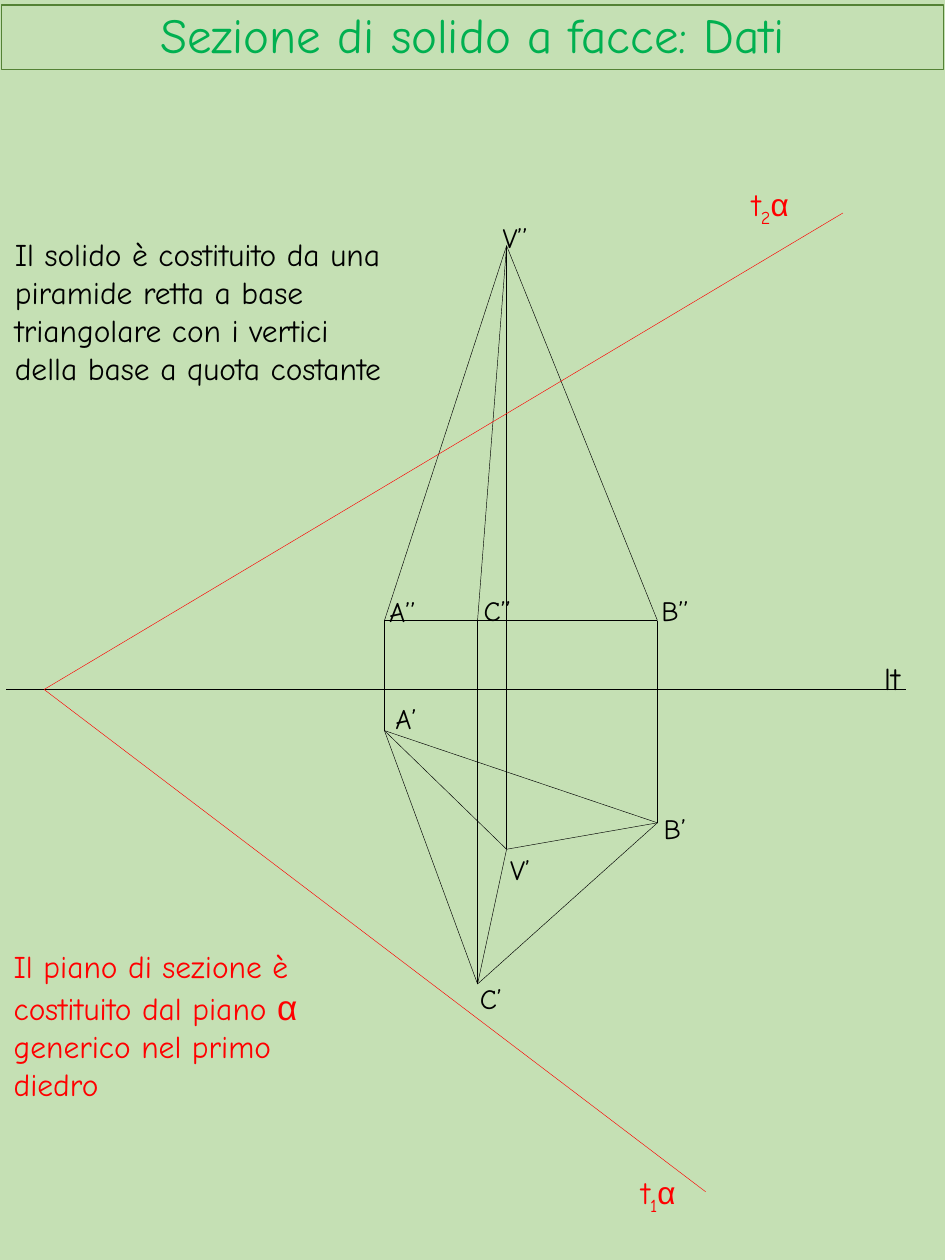
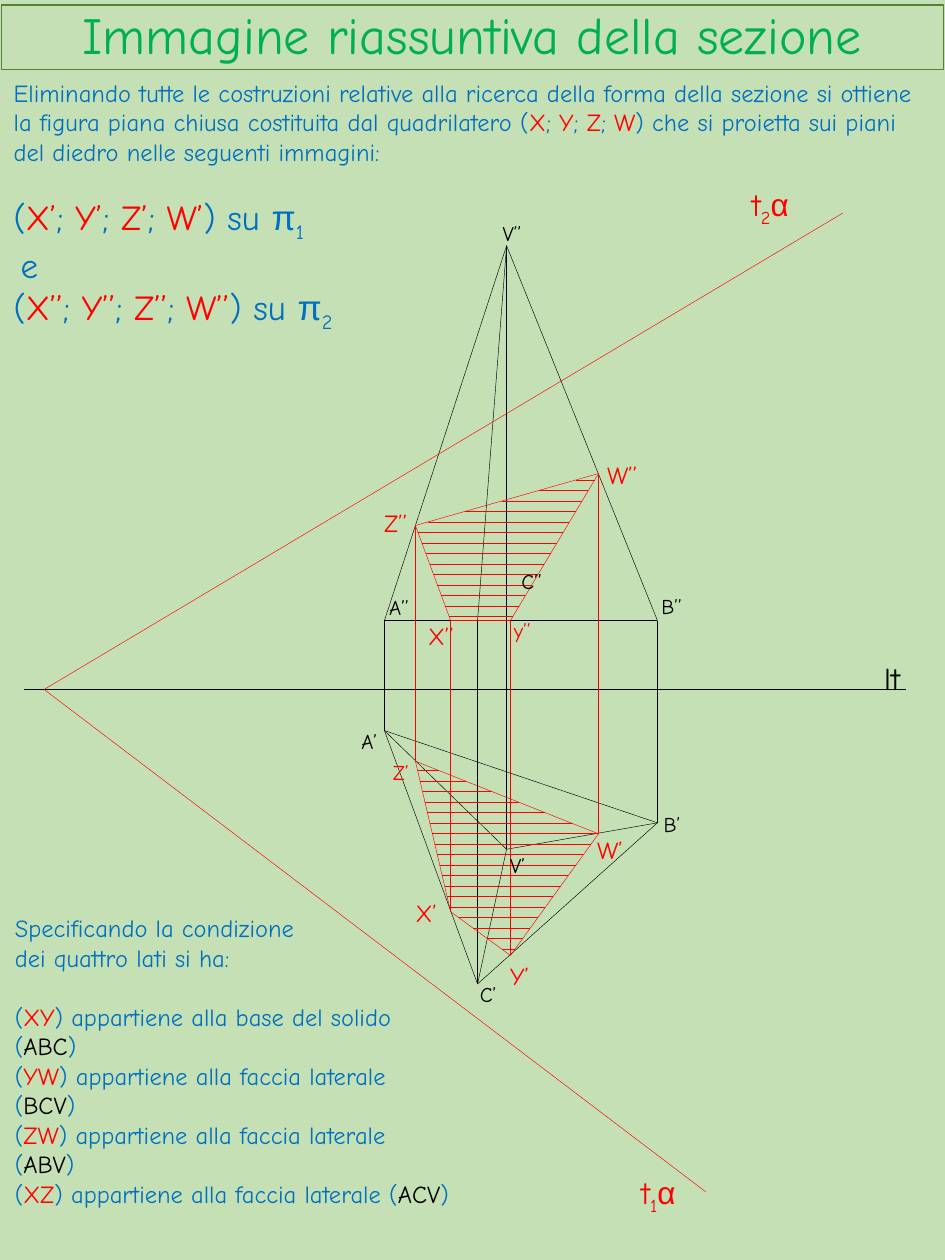
from collections import namedtuple
from itertools import combinations

from lxml import etree
from pptx import Presentation
from pptx.dml.color import RGBColor
from pptx.enum import shapes, text
from pptx.oxml import ns
from pptx.util import Pt

PALE_GREEN = RGBColor(0xC5, 0xE0, 0xB4)
FRAME_GREEN = RGBColor(0x54, 0x82, 0x35)
TITLE_GREEN = RGBColor(0x00, 0xB0, 0x50)
BLUE = RGBColor(0x00, 0x70, 0xC0)
RED = RGBColor(0xFF, 0x00, 0x00)
BLACK = RGBColor(0x00, 0x00, 0x00)
FONT = "Comic Neue"
GREEK_FONT = "Arial"

Box = namedtuple("Box", "left top width height")
Span = namedtuple("Span", "text color size", defaults=(None, None))
Line = namedtuple("Line", "spans size before indent", defaults=(0, 0))
Vertex = namedtuple("Vertex", "x elevation plan")

TITLE_BOX = Box(0.7, 2.9, 538.6, 36.7)
# Figure lengths run from the point where the plane's traces meet the ground line.
ORIGIN = (25.2, 394)
BASE = -39.4
SOLID = {
    "A": Vertex(194.5, BASE, 23.5),
    "B": Vertex(350.5, BASE, 76.2),
    "C": Vertex(247.7, BASE, 168.3),
    "V": Vertex(264.3, -253.6, 91.3),
}
SECTION = {
    "X": Vertex(232.3, BASE, 127),
    "Y": Vertex(266.5, BASE, 152),
    "W": Vertex(316.8, -123.4, 82.5),
    "Z": Vertex(212.2, -93.7, 41),
}
HATCH_STEP = 6
GROUND_END = 492.5
TRACES = [
    ("1", (378, 287), (334.1, 272.7)),
    ("2", (456.5, -272.3), (397.4, -291.8)),
]
SOLID_LABELS = {
    "A’": (193.7, 3.4), "B’": (347, 66.1), "C’": (241.9, 163.3), "V’": (259.2, 89.8),
    "A’’": (190.1, -57.8), "B’’": (345.6, -58.5), "C’’": (244.1, -58.5),
    "V’’": (254.9, -271.6),
}
SUMMARY_LABELS = {**SOLID_LABELS, "A’": (174.2, 18.6), "C’’": (265.7, -72.9)}
SECTION_LABELS = {
    "X’": (205.2, 115.8), "Y’": (259.2, 151.8), "W’": (308.9, 79.8),
    "X’’": (212.4, -42.6), "Z’’": (187.2, -107.4), "W’’": (314.6, -134.8),
}
SMALL_SECTION_LABELS = {"Z’": (192.2, 36.6), "y’’": (261.4, -44.8)}


def add_text(page, box, lines, color):
    """Write lines; Greek letters take their own font and digits drop to subscripts."""
    shape = page.shapes.add_textbox(*map(Pt, box))
    frame = shape.text_frame
    frame.word_wrap = True
    for index, line in enumerate(lines):
        para = frame.paragraphs[0] if index == 0 else frame.add_paragraph()
        para.font.name = FONT
        para.font.size = Pt(line.size)
        para.space_before = Pt(line.before)
        if line.indent:
            para._p.get_or_add_pPr().set("marL", str(Pt(line.indent)))
        for part in line.spans:
            span = para.add_run()
            span.text = part.text
            span.font.name = GREEK_FONT if part.text in "απ" else FONT
            span.font.size = Pt(part.size or line.size)
            span.font.color.rgb = color if part.color is None else part.color
            if part.text.isdigit():
                span._r.get_or_add_rPr().set("baseline", "-25000")


def add_title(page, box, words, size):
    title = page.shapes.title
    title.left, title.top, title.width, title.height = map(Pt, box)
    title.line.color.rgb = FRAME_GREEN
    title.line.width = Pt(0.75)
    frame = title.text_frame
    frame.text = words
    frame.auto_size = text.MSO_AUTO_SIZE.NONE
    frame.vertical_anchor = text.MSO_ANCHOR.MIDDLE
    para = frame.paragraphs[0]
    para.alignment = text.PP_ALIGN.CENTER
    para.line_spacing = 0.9
    para.font.name = FONT
    para.font.size = Pt(size)
    para.font.color.rgb = TITLE_GREEN


def add_segment(page, origin, start, end, color=BLACK):
    ends = [Pt(base + shift) for point in (start, end) for base, shift in zip(origin, point)]
    segment = page.shapes.add_connector(shapes.MSO_CONNECTOR.STRAIGHT, *ends)
    segment.line.color.rgb = color
    segment.line.width = Pt(0.25)
    etree.SubElement(segment._element.spPr, ns.qn("a:effectLst"))


def add_labels(page, origin, labels, size, color=BLACK):
    for name, (x, y) in labels.items():
        box = Box(origin[0] + x, origin[1] + y, 34, 24)
        add_text(page, box, [Line([Span(name)], size)], color)


def in_elevation(vertex):
    return vertex.x, vertex.elevation


def in_plan(vertex):
    return vertex.x, vertex.plan


def draw_solid(page, origin):
    """Draw both views of the pyramid and the lines that join them."""
    for start, end in combinations(SOLID.values(), 2):
        add_segment(page, origin, in_plan(start), in_plan(end))
    a, b, c, apex = SOLID.values()
    add_segment(page, origin, in_elevation(a), in_elevation(b))
    for corner in (a, b, c):
        add_segment(page, origin, in_elevation(corner), in_elevation(apex))
    for vertex in SOLID.values():
        add_segment(page, origin, in_elevation(vertex), in_plan(vertex))


def draw_plane(page, origin, ground_start):
    """Draw the ground line and the two traces of the cutting plane."""
    add_segment(page, origin, (ground_start, 0), (GROUND_END, 0))
    add_labels(page, origin, {"lt": (473, -21)}, 18)
    for number, end, (x, y) in TRACES:
        add_segment(page, origin, (0, 0), end, RED)
        box = Box(origin[0] + x, origin[1] + y, 44.6, 29)
        add_text(page, box, [Line([Span("t"), Span(number), Span("α")], 18)], RED)


def draw_hatched(page, origin, corners, first, count):
    """Outline a polygon and fill it with level lines cut off at its sides."""
    sides = list(zip(corners, corners[1:] + corners[:1]))
    for start, end in sides:
        add_segment(page, origin, start, end, RED)
    for row in range(count):
        y = first + row * HATCH_STEP
        cuts = [x1 + (x2 - x1) * (y - y1) / (y2 - y1)
                for (x1, y1), (x2, y2) in sides if min(y1, y2) <= y < max(y1, y2)]
        add_segment(page, origin, (min(cuts), y), (max(cuts), y), RED)


def draw_section(page, origin):
    vertices = list(SECTION.values())
    draw_hatched(page, origin, [in_elevation(vertex) for vertex in vertices], -119.7, 14)
    draw_hatched(page, origin, [in_plan(vertex) for vertex in vertices], 46.4, 18)
    for vertex in vertices:
        add_segment(page, origin, in_elevation(vertex), in_plan(vertex), RED)
    add_labels(page, origin, SECTION_LABELS, 14, RED)
    add_labels(page, origin, SMALL_SECTION_LABELS, 12, RED)


def quadrilateral(mark=""):
    """Spans for the four section points in brackets, left open at the end."""
    spans = []
    for name in "XYZW":
        spans += [Span("; " if spans else "("), Span(name + mark, RED)]
    return spans


def projected(mark, plane):
    return quadrilateral(mark) + [Span(") su "), Span("π"), Span(plane)]


def side_line(side, relation, face):
    return [Span("("), Span(side, RED), Span(f") appartiene alla {relation} ("),
            Span(face, BLACK), Span(")")]


def start_page(deck, words, size):
    page = deck.slides.add_slide(deck.slide_layouts.get_by_name("Title Only"))
    add_title(page, TITLE_BOX, words, size)
    return page


def build_data_page(deck):
    page = start_page(deck, "Sezione di solido a facce: Dati", 28)
    draw_solid(page, ORIGIN)
    add_labels(page, ORIGIN, SOLID_LABELS, 16)
    draw_plane(page, ORIGIN, -21.6)
    solid_note = ("Il solido è costituito da una piramide retta a base triangolare "
                  "con i vertici della base a quota costante")
    add_text(page, Box(1.4, 131, 223.9, 116.6), [Line([Span(solid_note)], 18)], BLACK)
    plane_note = [Span("Il piano di sezione è costituito dal piano "),
                  Span("α", size=20), Span(" generico nel primo diedro")]
    add_text(page, Box(0.7, 537.8, 193, 97.2), [Line(plane_note, 18)], RED)


def build_summary_page(deck):
    page = start_page(deck, "Immagine riassuntiva della sezione", 29.7)
    draw_solid(page, ORIGIN)
    draw_plane(page, ORIGIN, -11.5)
    draw_section(page, ORIGIN)
    add_labels(page, ORIGIN, SUMMARY_LABELS, 12)

    opening = ("Eliminando tutte le costruzioni relative alla ricerca della forma della "
               "sezione si ottiene la figura piana chiusa costituita dal quadrilatero ")
    closing = ") che si proietta sui piani del diedro nelle seguenti immagini:"
    add_text(page, Box(0.7, 41, 538.6, 147.6), [
        Line([Span(opening), *quadrilateral(), Span(closing)], 14),
        Line(projected("’", "1"), 20, before=17),
        Line([Span("e")], 20, indent=4),
        Line(projected("’’", "2"), 20),
    ], BLUE)

    sides = [
        side_line("XY", "base del solido", "ABC"),
        side_line("YW", "faccia laterale", "BCV"),
        side_line("ZW", "faccia laterale", "ABV"),
        side_line("XZ", "faccia laterale", "ACV"),
    ]
    add_text(page, Box(1.4, 518.4, 263.5, 193.7), [
        Line([Span("Specificando la condizione")], 14),
        Line([Span("dei quattro lati si ha:")], 14),
        *(Line(spans, 14, before=0 if row else 17) for row, spans in enumerate(sides)),
    ], BLUE)


def main():
    deck = Presentation()
    deck.slide_width, deck.slide_height = Pt(540), Pt(720)
    fill = deck.slide_master.background.fill
    fill.solid()
    fill.fore_color.rgb = PALE_GREEN
    build_data_page(deck)
    build_summary_page(deck)
    deck.save("out.pptx")


if __name__ == "__main__":
    main()
